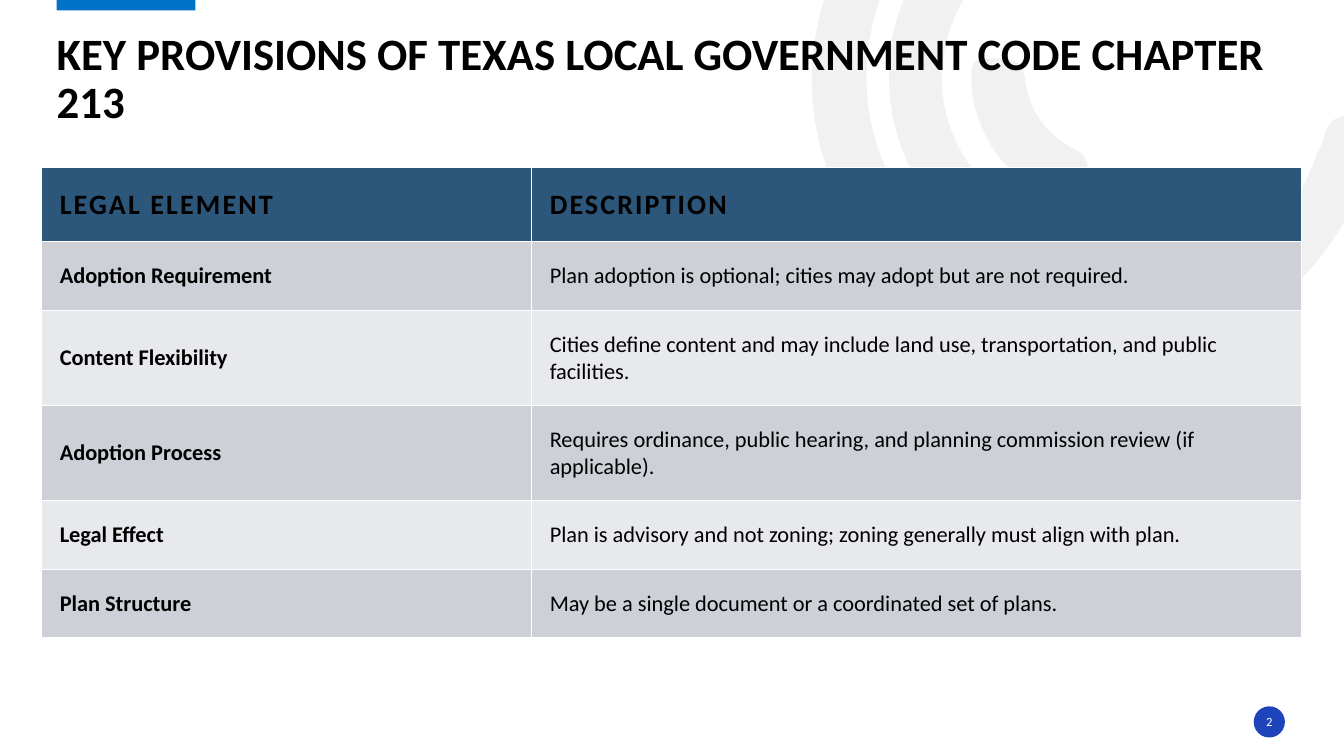
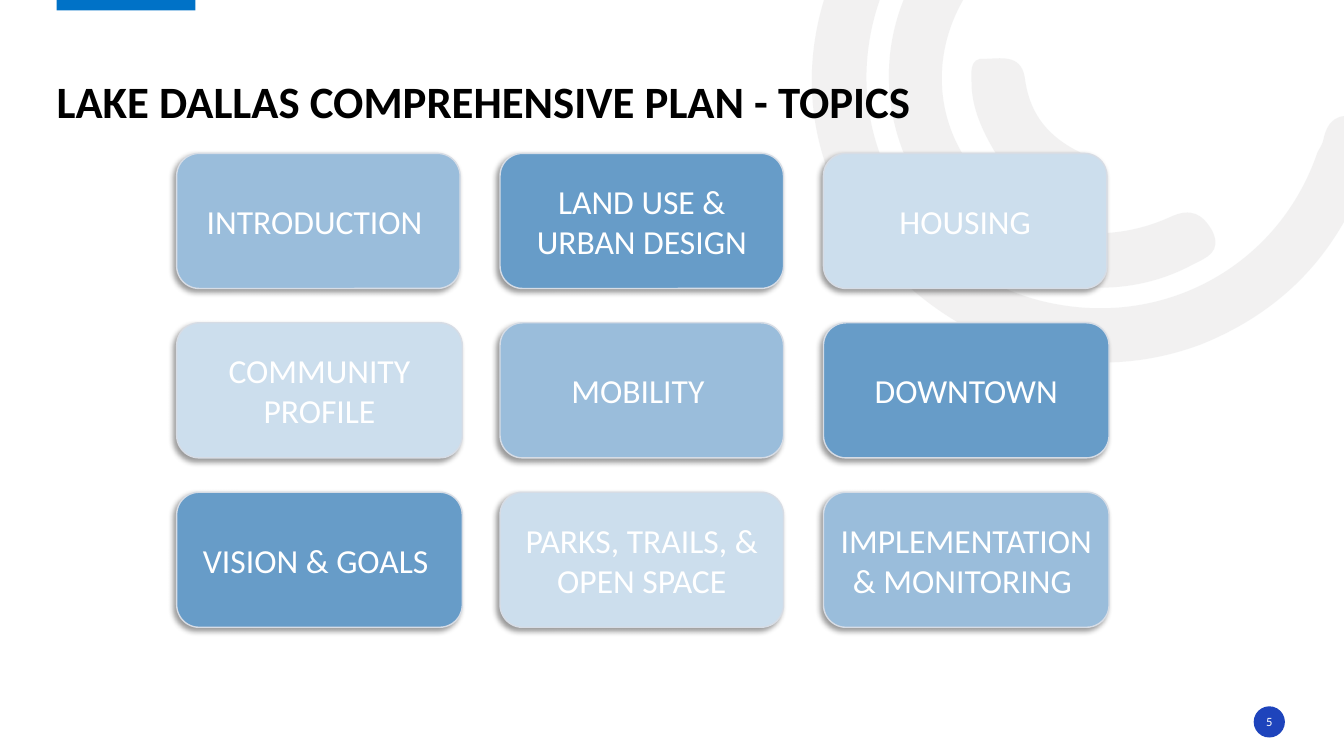
"""Build two slides on a comprehensive plan: a table of provisions and a grid of topics."""
from itertools import product

from lxml.etree import SubElement as Sub
from pptx import Presentation
from pptx.dml.color import RGBColor as Rgb
from pptx.enum.shapes import MSO_SHAPE as Kind
from pptx.enum.text import MSO_ANCHOR as Anchor, PP_ALIGN as Align
from pptx.oxml.ns import qn
from pptx.util import Pt


class Theme:
    font = "Calibri"
    black, white = "000000", "FFFFFF"
    arc, band, disc = "E7E6E6", "0072C7", "1E44BC"
    head, odd, even = "2C567A", "CDD1D7", "E8E9EC"
    tiles = ["9ABDDB", "679CC8", "CCDEED"]
    edge = "D6DCE5"
    title, topic, label, body, page = 32, 24, 20, 16, 9


def paint(shape, fill):
    shape.shadow.inherit = False
    shape.fill.solid()
    shape.fill.fore_color.rgb = Rgb.from_string(fill)
    shape.line.fill.background()


def write(frame, text, size, color, bold=False, align=Align.LEFT):
    frame.text = text
    frame.word_wrap = True
    para = frame.paragraphs[0]
    para.alignment = align
    font = para.runs[0].font
    font.name, font.size, font.bold = Theme.font, Pt(size), bold
    font.color.rgb = Rgb.from_string(color)
    return para


ARCS = [
    ((613, 165), [
        (575, 107, 567, 36, 603, -36), (641, -109, 703, -146, 785, -149),
        (796, -149, 807, -151, 814, -140), (824, -126, 811, -111, 791, -111),
        (696, -111, 623, -42, 619, 49), (616, 130, 674, 202, 753, 217),
        (835, 233, 914, 188, 941, 109), (942, 107, 944, 104, 945, 101),
        (948, 86, 955, 80, 971, 84), (989, 89, 984, 102, 980, 112),
        (960, 176, 920, 221, 858, 246), (770, 279, 674, 248, 613, 165)]),
    ((664, 143), [
        (621, 83, 626, 5, 677, -49), (685, -57, 693, -68, 706, -56),
        (716, -46, 718, -36, 705, -23), (666, 19, 662, 78, 695, 121),
        (726, 165, 783, 179, 836, 155), (851, 148, 859, 153, 866, 165),
        (873, 180, 862, 184, 852, 189), (789, 223, 708, 203, 664, 143)]),
    ((711, 109), [
        (702, 94, 694, 77, 694, 59), (694, 53, 692, 41, 703, 42),
        (714, 42, 729, 38, 732, 55), (735, 79, 746, 95, 768, 107),
        (783, 113, 775, 127, 772, 136), (769, 148, 760, 143, 752, 140),
        (735, 135, 722, 122, 711, 109)]),
]
PAGES = [
    ("2", "KEY PROVISIONS OF TEXAS LOCAL GOVERNMENT CODE CHAPTER 213"),
    ("5", "LAKE DALLAS COMPREHENSIVE PLAN - TOPICS"),
]
ROWS = [
    (53, "LEGAL ELEMENT", "DESCRIPTION"),
    (49, "Adoption Requirement",
     "Plan adoption is optional; cities may adopt but are not required."),
    (68, "Content Flexibility",
     "Cities define content and may include land use, transportation, and public facilities."),
    (68, "Adoption Process",
     "Requires ordinance, public hearing, and planning commission review (if applicable)."),
    (49, "Legal Effect",
     "Plan is advisory and not zoning; zoning generally must align with plan."),
    (49, "Plan Structure", "May be a single document or a coordinated set of plans."),
]
TOPICS = [
    ["INTRODUCTION ", "LAND USE & URBAN DESIGN", "HOUSING"],
    ["COMMUNITY PROFILE", "MOBILITY ", "DOWNTOWN"],
    ["VISION & GOALS ", "PARKS, TRAILS, & OPEN SPACE", "IMPLEMENTATION & MONITORING "],
]

deck = Presentation()
deck.slide_width, deck.slide_height = Pt(960), Pt(540)

for page, title in PAGES:
    shapes = deck.slides.add_slide(deck.slide_layouts[6]).shapes
    for (x, y), curves in ARCS:
        pen = shapes.build_freeform(Pt(x), Pt(y))
        for curve in curves:
            dots = [(Pt(a), Pt(b)) for a, b in zip(curve[::2], curve[1::2])]
            pen.add_line_segments(dots, close=False)
        pen.add_line_segments([], close=True)
        arc = pen.convert_to_shape()
        lines = list(arc._element.iter(qn("a:lnTo")))
        for i in range(0, len(lines), 3):
            bend = Sub(lines[i].getparent(), qn("a:cubicBezTo"))
            lines[i].addprevious(bend)
            for line in lines[i:i + 3]:
                bend.append(line[0])
                line.getparent().remove(line)
        paint(arc, Theme.arc)
        tint = arc.fill._xPr.find(qn("a:solidFill"))[0]
        Sub(tint, qn("a:alpha"), val="53000")

    band = shapes.add_shape(Kind.RECTANGLE, Pt(40.5), Pt(-1.5), Pt(99), Pt(9))
    paint(band, Theme.band)
    disc = shapes.add_shape(Kind.OVAL, Pt(895.5), Pt(504.5), Pt(22.3), Pt(22.3))
    paint(disc, Theme.disc)
    head = shapes.add_textbox(Pt(40.5), Pt(19.3), Pt(878), Pt(72.5))
    for frame in (disc.text_frame, head.text_frame):
        frame.margin_left = frame.margin_right = 0
        frame.margin_top = frame.margin_bottom = 0
    disc.text_frame.vertical_anchor = Anchor.MIDDLE
    head.text_frame.vertical_anchor = Anchor.BOTTOM
    write(disc.text_frame, page, Theme.page, Theme.white, align=Align.CENTER)
    write(head.text_frame, title, Theme.title, Theme.black, True).line_spacing = 0.9

first, last = deck.slides

height = sum(row[0] for row in ROWS)
table = first.shapes.add_table(len(ROWS), 2, Pt(29.7), Pt(119.8), Pt(900), Pt(height)).table
for col, width in zip(table.columns, (350, 550)):
    col.width = Pt(width)
for r, (tall, *texts) in enumerate(ROWS):
    table.rows[r].height = Pt(tall)
    for c, text in enumerate(texts):
        cell = table.cell(r, c)
        cell.margin_left = cell.margin_right = Pt(13)
        cell.margin_top = cell.margin_bottom = Pt(13)
        cell.vertical_anchor = Anchor.MIDDLE
        size = Theme.body if r else Theme.label
        para = write(cell.text_frame, text, size, Theme.black, r == 0 or c == 0)
        if r == 0:
            para.runs[0].font._element.set("spc", "150")
        cell.fill.solid()
        shade = Theme.head if r == 0 else Theme.odd if r % 2 else Theme.even
        cell.fill.fore_color.rgb = Rgb.from_string(shade)

for r, c in product(range(3), repeat=2):
    wide = 202.5 if r == 0 or c == 1 else 204
    tile = last.shapes.add_shape(
        Kind.ROUNDED_RECTANGLE, Pt(126.2 + 231 * c), Pt(109.6 + 121 * r), Pt(wide), Pt(96.5))
    paint(tile, Theme.tiles[(c - r) % 3])
    tile.line.color.rgb = Rgb.from_string(Theme.edge)
    tile.line.width = Pt(1)
    glow = Sub(tile._element.spPr.find(qn("a:effectLst")), qn("a:outerShdw"),
               blurRad=str(Pt(4)), dist=str(Pt(3)), dir="8100000", rotWithShape="0")
    Sub(Sub(glow, qn("a:srgbClr"), val=Theme.black), qn("a:alpha"), val="40000")
    tile.text_frame.vertical_anchor = Anchor.MIDDLE
    write(tile.text_frame, TOPICS[r][c], Theme.topic, Theme.white, align=Align.CENTER)

deck.save("out.pptx")
